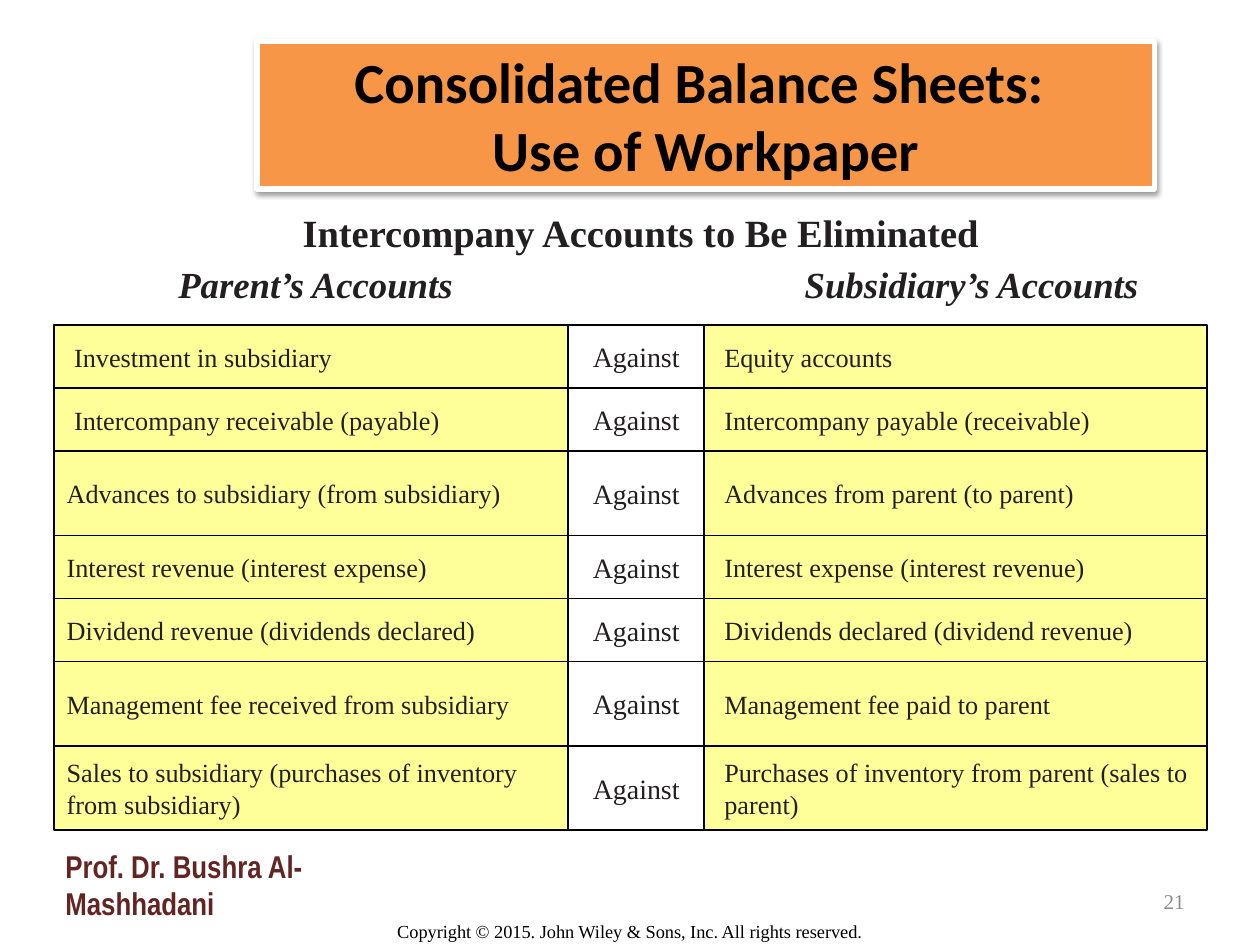
from itertools import accumulate

from lxml import etree
from pptx import Presentation
from pptx import util as u
from pptx.dml.color import RGBColor
from pptx.enum import shapes, text
from pptx.oxml import ns

WIDTH, HEIGHT = u.Inches(10), u.Inches(7.5)
ORANGE = RGBColor(0xF7, 0x96, 0x46)
YELLOW = RGBColor(0xFF, 0xFF, 0x99)
WHITE = RGBColor(0xFF, 0xFF, 0xFF)
BLACK = RGBColor(0, 0, 0)
INK = RGBColor(0x23, 0x1F, 0x20)
GREY = RGBColor(0x8C, 0x8C, 0x8C)
MAROON = RGBColor(0x63, 0x25, 0x23)
SERIF = "Times New Roman"
LEFT, CENTER, RIGHT = text.PP_ALIGN.LEFT, text.PP_ALIGN.CENTER, text.PP_ALIGN.RIGHT
TOP, MIDDLE, BOTTOM = text.MSO_ANCHOR.TOP, text.MSO_ANCHOR.MIDDLE, text.MSO_ANCHOR.BOTTOM

COLUMNS = (4.08, 1.08, 3.99)
SHORT, TALL = 0.5, 0.67
PADDING, INDENT = 0.1, 0.06
ACCOUNTS = [
    ("Investment in subsidiary", "Equity accounts", SHORT, INDENT),
    ("Intercompany receivable (payable)", "Intercompany payable (receivable)", SHORT, INDENT),
    ("Advances to subsidiary (from subsidiary)", "Advances from parent (to parent)", TALL, 0),
    ("Interest revenue (interest expense)", "Interest expense (interest revenue)", SHORT, 0),
    ("Dividend revenue (dividends declared)", "Dividends declared (dividend revenue)", SHORT, 0),
    ("Management fee received from subsidiary", "Management fee paid to parent", TALL, 0),
    ("Sales to subsidiary (purchases of inventory from subsidiary)",
     "Purchases of inventory from parent (sales to parent)", TALL, 0),
]


def write(paragraph, lines, size, color, align=LEFT, font=SERIF, bold=False, italic=False):
    paragraph.alignment = align
    for number, line in enumerate(lines):
        if number:
            paragraph.add_line_break()
        run = paragraph.add_run()
        run.text = line
        run.font.name = font
        run.font.size = u.Pt(size)
        run.font.bold = bold
        run.font.italic = italic
        run.font.color.rgb = color


def add_label(slide, place, words, size, color, anchor=MIDDLE, wrap=True, **style):
    label = slide.shapes.add_textbox(*map(u.Inches, place))
    frame = label.text_frame
    frame.word_wrap = wrap
    frame.vertical_anchor = anchor
    write(frame.paragraphs[0], [words], size, color, **style)


def add_panel(slide, place, fill, outline, weight, anchor=MIDDLE):
    panel = slide.shapes.add_shape(shapes.MSO_SHAPE.RECTANGLE, *map(u.Inches, place))
    panel.fill.solid()
    panel.fill.fore_color.rgb = fill
    panel.line.color.rgb = outline
    panel.line.width = u.Pt(weight)
    panel.shadow.inherit = False
    panel.text_frame.word_wrap = True
    panel.text_frame.vertical_anchor = anchor
    return panel


def add_title(slide, place, lines):
    banner = add_panel(slide, place, ORANGE, WHITE, 3, BOTTOM)
    effects = banner.element.spPr.find(ns.qn("a:effectLst"))
    shadow = etree.SubElement(effects, ns.qn("a:outerShdw"), blurRad=str(u.Pt(3.1)),
                              dist=str(u.Pt(1.6)), dir="5400000", rotWithShape="0")
    tint = etree.SubElement(shadow, ns.qn("a:srgbClr"), val=str(BLACK))
    etree.SubElement(tint, ns.qn("a:alpha"), val="38000")
    write(banner.text_frame.paragraphs[0], lines, 32.4, BLACK, CENTER, "Calibri", bold=True)


def add_account(slide, place, words, indent):
    frame = add_panel(slide, place, YELLOW, BLACK, 1).text_frame
    paragraph = frame.paragraphs[0]
    if indent:
        properties = paragraph._p.get_or_add_pPr()
        properties.set("marL", str(u.Inches(indent)))
        properties.set("indent", "0")
    else:
        frame.margin_right = 0
    write(paragraph, [words], 15, INK)


def add_against(slide, place):
    frame = add_panel(slide, place, WHITE, BLACK, 1).text_frame
    write(frame.paragraphs[0], ["Against"], 16, INK, CENTER)


def add_eliminations(slide, left, top):
    parent_left, against_left, subsidiary_left = accumulate(COLUMNS[:-1], initial=left)
    parent_width, against_width, subsidiary_width = COLUMNS
    for parent, subsidiary, height, indent in ACCOUNTS:
        add_account(slide, (parent_left, top, parent_width, height), parent, indent)
        add_account(slide, (subsidiary_left, top, subsidiary_width, height), subsidiary, INDENT)
        add_against(slide, (against_left, top, against_width, height))
        top += height


def main():
    deck = Presentation()
    deck.slide_width, deck.slide_height = WIDTH, HEIGHT
    slide = deck.slides.add_slide(deck.slide_layouts[6])
    add_label(slide, (0, 7.25, 10, 0.29),
              "Copyright © 2015. John Wiley & Sons, Inc. All rights reserved.",
              10.5, BLACK, TOP, align=CENTER)
    add_title(slide, (2.04, 0.33, 7.12, 1.17),
              ["Consolidated Balance Sheets: ", "Use of Workpaper"])
    add_label(slide, (7.17, 6.95, 2.33, 0.4), "21", 12, GREY, align=RIGHT)
    add_eliminations(slide, 0.43, 2.58)
    for left, width, heading in ((0.67, 3.67, "Parent’s Accounts"),
                                 (5.92, 3.58, "Subsidiary’s Accounts")):
        add_label(slide, (left, 2, width, 0.5), heading, 21, INK,
                  align=CENTER, bold=True, italic=True)
    add_label(slide, (2.27, 1.61, 5.63, 0.47), "Intercompany Accounts to Be Eliminated",
              22, INK, TOP, wrap=False, align=CENTER, bold=True)
    add_label(slide, (0.42, 6.67, 3.25, 0.4), "Prof. Dr. Bushra Al-Mashhadani",
              18, MAROON, TOP, font="Arial Narrow", bold=True)
    deck.save("out.pptx")


if __name__ == "__main__":
    main()
